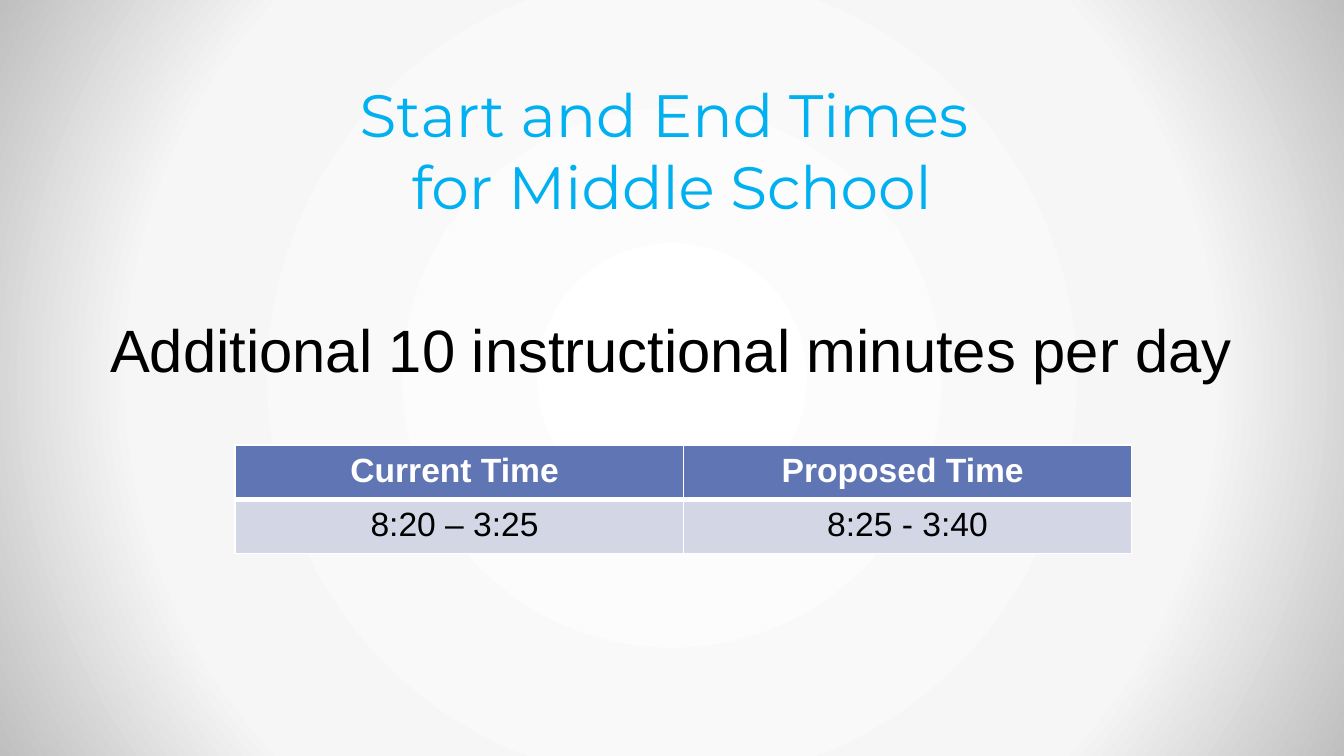
from dataclasses import dataclass

from lxml import etree
from pptx import Presentation
from pptx import util as u
from pptx.dml.color import RGBColor
from pptx.enum import text
from pptx.oxml import parse_xml
from pptx.oxml.ns import nsdecls, qn


@dataclass(frozen=True)
class Theme:
    title_font: str = "Montserrat"
    body_font: str = "Arial"
    large: int = 32
    small: int = 18
    title: str = "00B0F0"
    body: str = "000000"
    white: str = "FFFFFF"
    header_fill: str = "6076B4"
    row_fill: str = "D2D6E5"
    backdrop: tuple = ((0, "FFFFFF"), (70, "F6F6F6"), (100, "BFBFBF"))


theme = Theme()


def write(text_frame, content, font, size, color, bold=False):
    """Fill a text frame with centred, uniformly formatted text."""
    text_frame.text = content
    for paragraph in text_frame.paragraphs:
        paragraph.alignment = text.PP_ALIGN.CENTER
        for run in paragraph.runs:
            run.font.name = font
            run.font.size = u.Pt(size)
            run.font.bold = bold
            run.font.color.rgb = RGBColor.from_string(color)


def add_border(cell, side, width):
    """Draw one white cell edge; call before setting the cell's fill."""
    line = etree.SubElement(cell._tc.get_or_add_tcPr(), qn(f"a:ln{side}"), w=str(u.Pt(width)))
    fill = etree.SubElement(line, qn("a:solidFill"))
    etree.SubElement(fill, qn("a:srgbClr"), val=theme.white)


presentation = Presentation()
presentation.slide_width = u.Inches(10)
presentation.slide_height = u.Inches(10 * 9 / 16)
slide = presentation.slides.add_slide(presentation.slide_layouts[6])

# Radial background
background = slide.background.fill
background.gradient()
gradient = slide._element.find(".//" + qn("a:gradFill"))
stops = "".join(
    f'<a:gs pos="{position * 1000}"><a:srgbClr val="{color}"/></a:gs>'
    for position, color in theme.backdrop
)
radial = parse_xml(
    f'<a:gradFill {nsdecls("a")} rotWithShape="1"><a:gsLst>{stops}</a:gsLst>'
    '<a:path path="circle"><a:fillToRect l="50000" t="50000" r="50000" b="50000"/></a:path>'
    "</a:gradFill>"
)
gradient.getparent().replace(gradient, radial)

# Title and message: top, height, top inset, anchor, wording, font, colour
text_boxes = [
    (0.65, 0.94, 0.04, text.MSO_ANCHOR.MIDDLE,
     "Start and End Times \nfor Middle School", theme.title_font, theme.title),
    (1.65, 3.71, 0.68, text.MSO_ANCHOR.TOP,
     "Additional 10 instructional minutes per day", theme.body_font, theme.body),
]
for top, height, inset, anchor, content, font, color in text_boxes:
    box = slide.shapes.add_textbox(u.Inches(0.5), u.Inches(top), u.Inches(9), u.Inches(height))
    box.text_frame.word_wrap = True
    box.text_frame.margin_top = u.Inches(inset)
    box.text_frame.vertical_anchor = anchor
    write(box.text_frame, content, font, theme.large, color)

# Times table
times = [("Current Time ", "Proposed Time "), ("8:20 – 3:25 ", "8:25 - 3:40")]
row_styles = [
    (theme.header_fill, theme.white, True, {"L": 1, "R": 1, "T": 1, "B": 3}),
    (theme.row_fill, theme.body, False, {"L": 1, "R": 1, "T": 3, "B": 1}),
]
table = slide.shapes.add_table(
    2, 2, u.Inches(1.75), u.Inches(3.31), u.Inches(6.67), u.Inches(0.81)
).table
for row, values, (fill, color, bold, borders) in zip(table.rows, times, row_styles):
    for cell, value in zip(row.cells, values):
        write(cell.text_frame, value, theme.body_font, theme.small, color, bold)
        for side, width in borders.items():
            add_border(cell, side, width)
        cell.fill.solid()
        cell.fill.fore_color.rgb = RGBColor.from_string(fill)

presentation.save("out.pptx")
